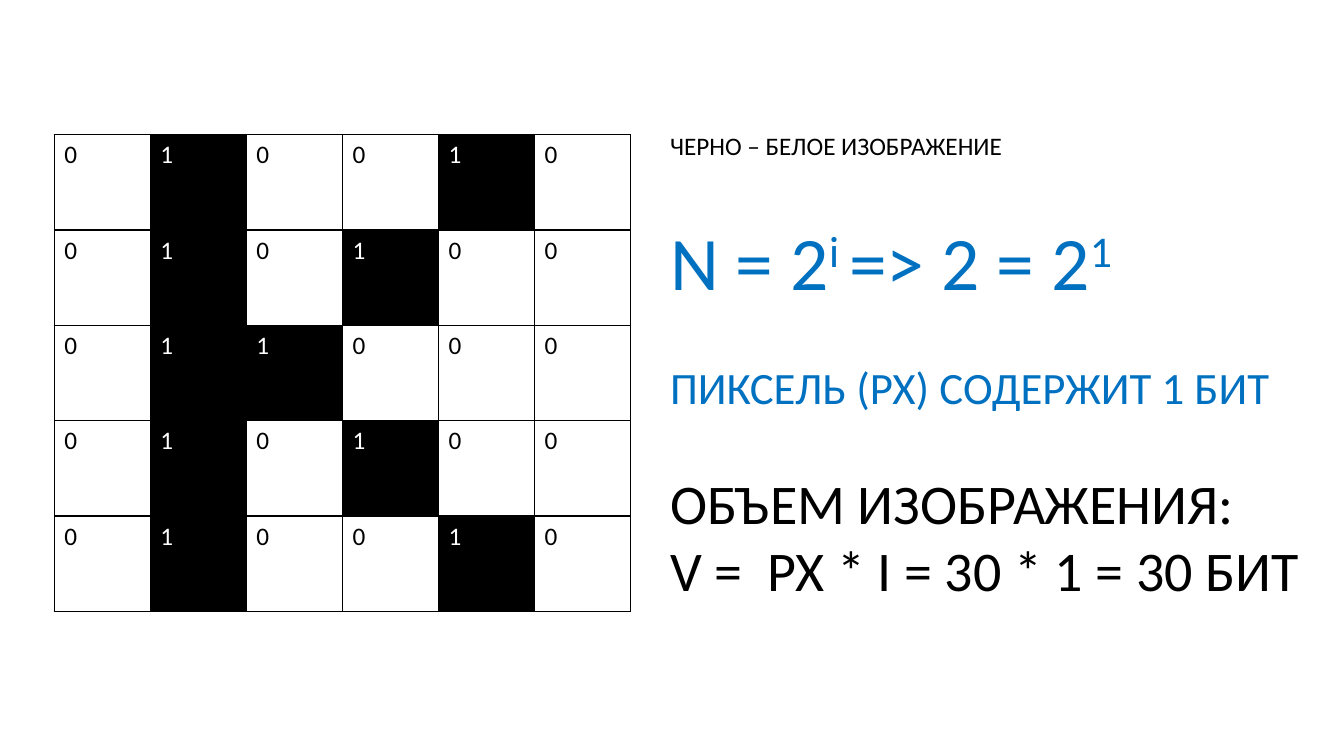
from lxml import etree
from pptx import Presentation
from pptx.dml.color import RGBColor
from pptx.oxml.ns import qn
from pptx.util import Pt

BLANK_LAYOUT = 6
BLACK, WHITE, BLUE = "000000", "FFFFFF", "0070C0"
FONT = "Calibri"
BORDER_SIDES = ("a:lnL", "a:lnR", "a:lnT", "a:lnB")
SUPERSCRIPT = "30000"
SECTION_GAP = 39

PIXELS = ("010010", "010100", "011000", "010100", "010010")

# Each line: size, colour, space before, and (text, is raised) pieces
FORMULA_LINES = (
    (18, BLACK, 0, [("ЧЕРНО – БЕЛОЕ ИЗОБРАЖЕНИЕ", False)]),
    (54, BLUE, SECTION_GAP, [("N = 2", False), ("i ", True),
                             ("=> 2 = 2", False), ("1", True)]),
    (32, BLUE, SECTION_GAP, [("ПИКСЕЛЬ (PX) СОДЕРЖИТ 1 БИТ", False)]),
    (40, BLACK, SECTION_GAP, [("ОБЪЕМ ИЗОБРАЖЕНИЯ:", False)]),
    (40, BLACK, 0, [("V =  PX * I = 30 * 1 = 30 БИТ", False)]),
)


def colour(value):
    return RGBColor.from_string(value)


def add_span(para, text, size, text_colour):
    span = para.add_run()
    span.text = text
    for name, value in {"name": FONT, "size": Pt(size)}.items():
        setattr(span.font, name, value)
    span.font.color.rgb = colour(text_colour)
    return span


def add_borders(cell, width, line_colour):
    properties = cell._tc.get_or_add_tcPr()
    for side in BORDER_SIDES:
        line = etree.SubElement(properties, qn(side), w=str(Pt(width)))
        fill = etree.SubElement(line, qn("a:solidFill"))
        etree.SubElement(fill, qn("a:srgbClr"), val=line_colour)


def add_pixel_table(page, left, top, width, height):
    frame = page.shapes.add_table(len(PIXELS), len(PIXELS[0]),
                                  Pt(left), Pt(top), Pt(width), Pt(height))
    table = frame.table
    for name in ("first_row", "horz_banding"):
        setattr(table, name, False)
    for row, bits in enumerate(PIXELS):
        for column, bit in enumerate(bits):
            cell = table.cell(row, column)
            fill_colour, text_colour = (BLACK, WHITE) if bit == "1" else (WHITE, BLACK)
            add_borders(cell, 1, BLACK)
            cell.fill.solid()
            cell.fill.fore_color.rgb = colour(fill_colour)
            add_span(cell.text_frame.paragraphs[0], bit, 18, text_colour)


def add_formula_text(page, left, top, width, height):
    box = page.shapes.add_textbox(Pt(left), Pt(top), Pt(width), Pt(height))
    frame = box.text_frame
    frame.word_wrap = True
    for index, (size, text_colour, gap, pieces) in enumerate(FORMULA_LINES):
        para = frame.add_paragraph() if index else frame.paragraphs[0]
        para.space_before = Pt(gap)
        for text, is_raised in pieces:
            span = add_span(para, text, size, text_colour)
            if is_raised:
                span._r.get_or_add_rPr().set("baseline", SUPERSCRIPT)


def main():
    deck = Presentation()
    deck.slide_width, deck.slide_height = Pt(960), Pt(540)
    page = deck.slides.add_slide(deck.slide_layouts[BLANK_LAYOUT])
    add_pixel_table(page, 38.8, 96.2, 411.6, 340.5)
    add_formula_text(page, 471.6, 89.3, 465, 346.3)
    deck.save("out.pptx")


if __name__ == "__main__":
    main()
